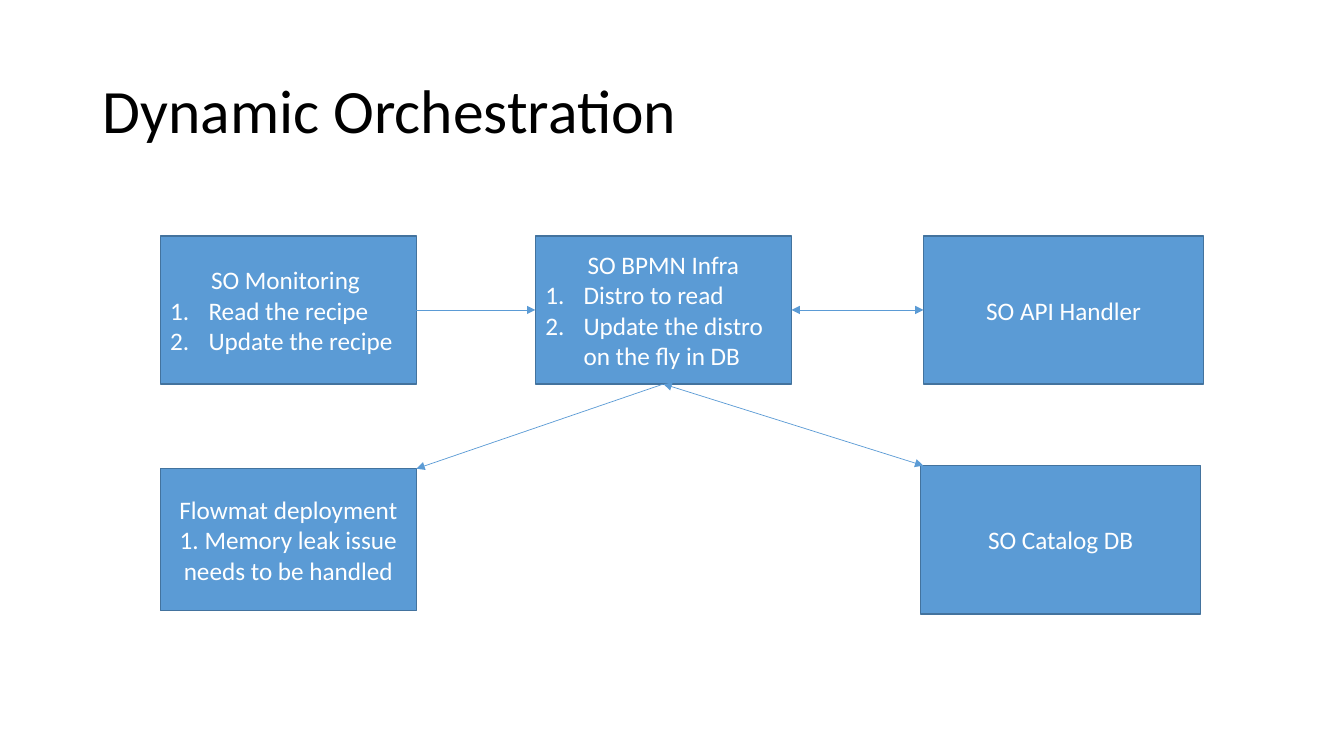
from lxml.etree import SubElement
from pptx import Presentation
from pptx.dml.color import RGBColor
from pptx.enum.shapes import MSO_CONNECTOR as CONNECTOR, MSO_SHAPE as SHAPE
from pptx.enum.text import MSO_ANCHOR as ANCHOR, PP_ALIGN as ALIGN
from pptx.oxml.ns import qn
from pptx.util import Inches, Pt

WIDTH, HEIGHT = 13.33, 7.5
FONT = "Calibri"
BLUE, EDGE, WHITE, BLACK = "5B9BD5", "43739E", "FFFFFF", "000000"
COLUMNS = {"left": (1.59, 2.54), "middle": (5.31, 2.54),
           "right": (9.16, 2.78), "right low": (9.13, 2.78)}
ROWS = {"top": (2.34, 1.47), "bottom": (4.65, 1.41), "bottom tall": (4.62, 1.47)}
INDENT = 0.38


def color(value):
    """Turn a hex string into a colour."""
    return RGBColor.from_string(value)


def add_run(paragraph, text, size, fill):
    """Add one styled run to a paragraph."""
    run = paragraph.add_run()
    run.text = text
    run.font.name = FONT
    run.font.size = Pt(size)
    run.font.color.rgb = color(fill)


def number_paragraph(paragraph):
    """Give a paragraph automatic numbering with a hanging indent."""
    properties = paragraph._p.get_or_add_pPr()
    properties.set("marL", str(Inches(INDENT)))
    properties.set("indent", str(-Inches(INDENT)))
    SubElement(properties, qn("a:buFont"), typeface="+mj-lt")
    SubElement(properties, qn("a:buAutoNum"), type="arabicPeriod")


def add_title(slide, text):
    """Add the slide title."""
    shape = slide.shapes.add_textbox(
        Inches(0.92), Inches(0.4), Inches(11.5), Inches(1.45))
    frame = shape.text_frame
    frame.word_wrap = True
    frame.vertical_anchor = ANCHOR.MIDDLE
    paragraph = frame.paragraphs[0]
    paragraph.line_spacing = 0.9
    add_run(paragraph, text, 44, BLACK)


def add_box(slide, column, row, lines, steps=()):
    """Add a component box with centred lines and numbered steps."""
    left, width = COLUMNS[column]
    top, height = ROWS[row]
    shape = slide.shapes.add_shape(
        SHAPE.RECTANGLE, Inches(left), Inches(top), Inches(width), Inches(height))
    shape.shadow.inherit = False
    shape.fill.solid()
    shape.fill.fore_color.rgb = color(BLUE)
    shape.line.color.rgb = color(EDGE)
    shape.line.width = Pt(1)
    frame = shape.text_frame
    frame.word_wrap = True
    frame.vertical_anchor = ANCHOR.MIDDLE
    for index, text in enumerate([*lines, *steps]):
        paragraph = frame.paragraphs[0] if index == 0 else frame.add_paragraph()
        if index < len(lines):
            paragraph.alignment = ALIGN.CENTER
        else:
            paragraph.alignment = ALIGN.LEFT
            number_paragraph(paragraph)
        add_run(paragraph, text, 18, WHITE)
    return shape


def add_arrow(slide, start, end, ends=("tailEnd",)):
    """Add a thin arrow with triangles at the given ends."""
    connector = slide.shapes.add_connector(CONNECTOR.STRAIGHT, *start, *end)
    connector.line.color.rgb = color(BLUE)
    connector.line.width = Pt(0.5)
    line = connector.line._get_or_add_ln()
    for end_name in ends:
        SubElement(line, qn(f"a:{end_name}"), type="triangle")
    SubElement(connector._element.spPr, qn("a:effectLst"))


def point(shape, across, down):
    """Find a point at shares of a shape's width and height."""
    return (shape.left + int(shape.width * across),
            shape.top + int(shape.height * down))


def main():
    """Build the slide and save it."""
    presentation = Presentation()
    presentation.slide_width = Inches(WIDTH)
    presentation.slide_height = Inches(HEIGHT)
    slide = presentation.slides.add_slide(presentation.slide_layouts[6])
    add_title(slide, "Dynamic Orchestration")

    monitoring = add_box(slide, "left", "top", ["SO Monitoring "],
                         ["Read the recipe", "Update the recipe"])
    infra = add_box(slide, "middle", "top", ["SO BPMN Infra"],
                    ["Distro to read", "Update the distro on the fly in DB"])
    deployment = add_box(slide, "left", "bottom", [
        "Flowmat deployment", "1. Memory leak issue needs to be handled"])
    handler = add_box(slide, "right", "top", ["SO API Handler"])
    catalog = add_box(slide, "right low", "bottom tall", ["SO Catalog DB"])

    both = ("headEnd", "tailEnd")
    add_arrow(slide, point(monitoring, 1, 0.5), point(infra, 0, 0.5))
    add_arrow(slide, point(infra, 0.5, 1), point(deployment, 1, 0))
    add_arrow(slide, point(infra, 1, 0.5), point(handler, 0, 0.5), both)
    add_arrow(slide, point(infra, 0.5, 1), point(catalog, 0.01, 0), both)

    presentation.save("out.pptx")


if __name__ == "__main__":
    main()
